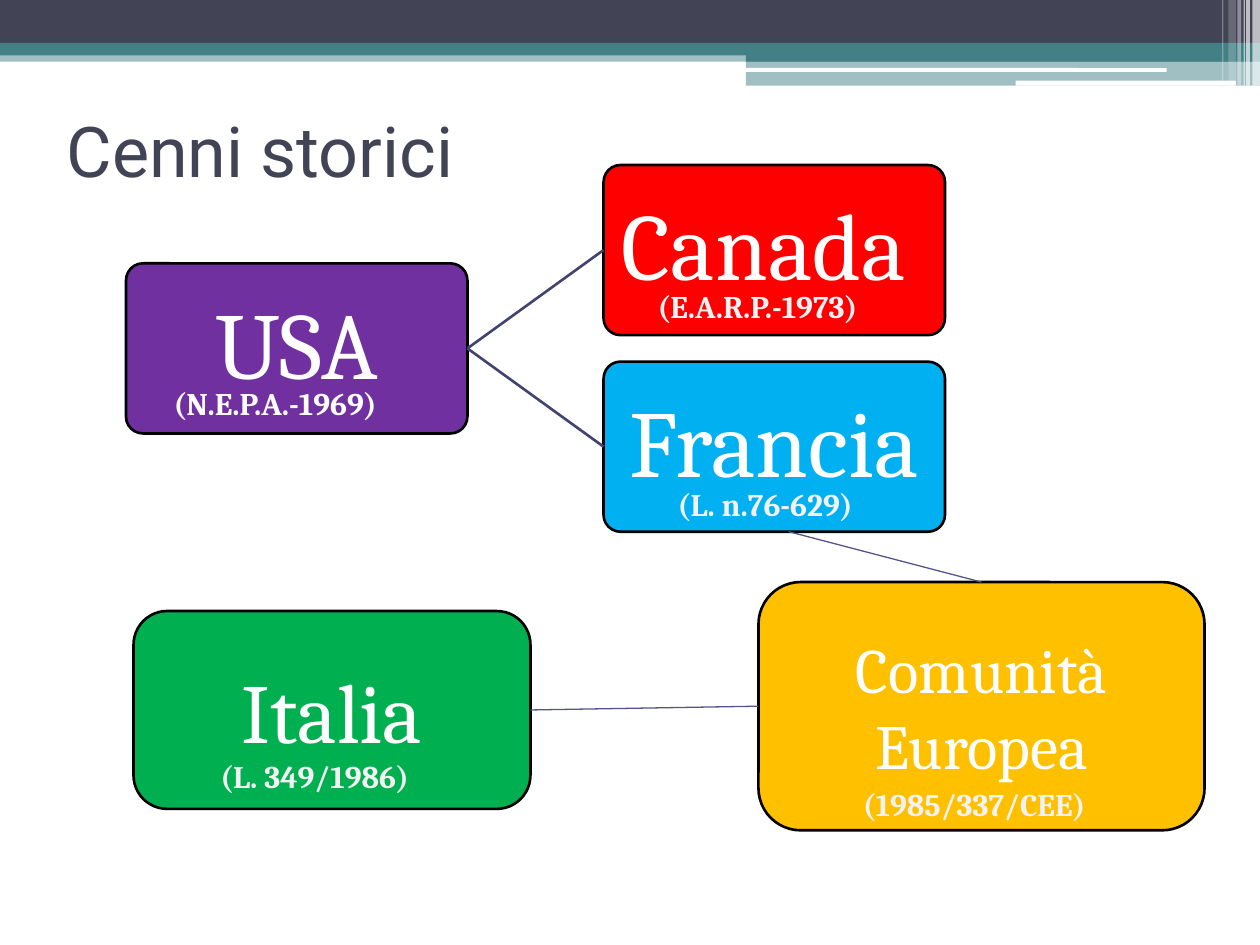
from dataclasses import dataclass

import pptx
import pptx.dml.color
import pptx.enum.shapes
import pptx.enum.text
import pptx.oxml
import pptx.oxml.ns
import pptx.util

Inches = pptx.util.Inches
Pt = pptx.util.Pt
Kind = pptx.enum.shapes.MSO_SHAPE
Align = pptx.enum.text.PP_ALIGN
Anchor = pptx.enum.text.MSO_ANCHOR

NAVY, TEAL, WHITE, PALE = "424456", "438086", "FFFFFF", "F2F2F2"


@dataclass
class Band:
    left: float
    top: float
    width: float
    height: float
    fill: str = WHITE
    alpha: int = 100
    kind: int = Kind.RECTANGLE


@dataclass
class Node:
    name: str
    left: float
    top: float
    width: float
    height: float
    fill: str
    size: int
    round: float = 0.17
    inset: float = 0.1
    space: float = 1.0


@dataclass
class Label:
    text: str
    left: float
    top: float
    width: float
    color: str = PALE


BANDS = [
    Band(0, 0.4, 10, 0.09, TEAL, 50),
    Band(0, 0, 10, 0.34, NAVY),
    Band(0, 0.34, 10, 0.1, TEAL),
    Band(5.92, 0.39, 4.08, 0.1, TEAL),
    Band(5.92, 0.48, 4.08, 0.2, TEAL, 50),
    Band(5.91, 0.54, 3.35, 0.03, kind=Kind.ROUNDED_RECTANGLE),
    Band(8.06, 0.64, 1.75, 0.04, kind=Kind.ROUNDED_RECTANGLE),
    Band(9.94, 0, 0.06, 0.68, alpha=65),
    Band(9.89, 0, 0.03, 0.68, alpha=65),
    Band(9.87, 0, 0.01, 0.68, alpha=60),
    Band(9.82, 0, 0.03, 0.68, alpha=40),
    Band(9.75, 0, 0.06, 0.64, alpha=20),
    Band(9.7, 0, 0.01, 0.64, alpha=30),
]

TREE = dict(width=2.71, height=1.35, size=54, round=0.1, inset=0.04, space=0.9)
NODES = [
    Node("USA", 1, 2.09, fill="7030A0", **TREE),
    Node("Canada ", 4.79, 1.31, fill="FF0000", **TREE),
    Node("Francia", 4.79, 2.87, fill="00B0F0", **TREE),
    Node("Comunità Europea", 6.02, 4.62, 3.54, 1.97, "FFC000", 36),
    Node("Italia", 1.06, 4.85, 3.15, 1.57, "00B050", 48),
]

LABELS = [
    Label("(N.E.P.A.-1969)", 1.28, 3, 2.2, WHITE),
    Label("(E.A.R.P.-1973)", 5.12, 2.23, 2.19),
    Label("(L. n.76-629)", 5.28, 3.8, 1.89),
    Label("(1985/337/CEE)", 6.75, 6.18, 2.27),
    Label("(L. 349/1986)", 1.65, 5.96, 1.97),
]


def rgb(code: str) -> pptx.dml.color.RGBColor:
    return pptx.dml.color.RGBColor.from_string(code)


def write(shape, text: str, *, size: int, color: str, font: str = "Cambria",
          bold: bool = False, align=Align.LEFT, anchor=Anchor.TOP,
          inset: float | None = None, space: float = 1.0) -> None:
    frame = shape.text_frame
    frame.word_wrap = True
    frame.vertical_anchor = anchor
    if inset is not None:
        frame.margin_left = frame.margin_right = Inches(inset)
        frame.margin_top = frame.margin_bottom = Inches(inset)
    para = frame.paragraphs[0]
    para.alignment = align
    para.line_spacing = space
    run = para.add_run()
    run.text = text
    run.font.name = font
    run.font.size = Pt(size)
    run.font.bold = bold
    run.font.color.rgb = rgb(color)


def add_box(shapes, kind, item: Band | Node):
    """Add a filled shape without shadow at the item's place."""
    box = shapes.add_shape(kind, Inches(item.left), Inches(item.top),
                           Inches(item.width), Inches(item.height))
    box.shadow.inherit = False
    box.fill.solid()
    box.fill.fore_color.rgb = rgb(item.fill)
    return box


def add_band(shapes, band: Band) -> None:
    box = add_box(shapes, band.kind, band)
    box.line.fill.background()
    if band.alpha < 100:
        color = box.fill._xPr.find(".//" + pptx.oxml.ns.qn("a:srgbClr"))
        alpha = pptx.oxml.parse_xml(
            f'<a:alpha {pptx.oxml.ns.nsdecls("a")} val="{band.alpha * 1000}"/>')
        color.append(alpha)


def add_node(shapes, node: Node):
    box = add_box(shapes, Kind.ROUNDED_RECTANGLE, node)
    box.adjustments[0] = node.round
    box.line.color.rgb = rgb("000000")
    box.line.width = Pt(1.5)
    write(box, node.name, size=node.size, color=WHITE, align=Align.CENTER,
          anchor=Anchor.MIDDLE, inset=node.inset, space=node.space)
    return box


def add_text(shapes, left: float, top: float, width: float, height: float,
             text: str, **form) -> None:
    box = shapes.add_textbox(Inches(left), Inches(top), Inches(width), Inches(height))
    write(box, text, **form)


def add_link(shapes, start, end, side: int, color: str, width: float,
             begin: tuple[float, float] | None = None) -> None:
    """Link start's right side, or the point begin, to a side of end."""
    x, y = begin or (0, 0)
    line = shapes.add_connector(pptx.enum.shapes.MSO_CONNECTOR.STRAIGHT,
                                Inches(x), Inches(y), Inches(x), Inches(y))
    if begin is None:
        line.begin_connect(start, 3)
    line.end_connect(end, side)
    line.line.color.rgb = rgb(color)
    line.line.width = Pt(width)
    line._element.spPr.append(pptx.oxml.parse_xml(
        f'<a:effectLst {pptx.oxml.ns.nsdecls("a")}/>'))


def main() -> None:
    deck = pptx.Presentation()
    deck.slide_width, deck.slide_height = Inches(10), Inches(7.5)
    shapes = deck.slides.add_slide(deck.slide_layouts[6]).shapes

    for band in BANDS:
        add_band(shapes, band)
    add_text(shapes, 0.43, 0.6, 9, 1.17, "Cenni storici", size=40,
             color=NAVY, font="Roboto", anchor=Anchor.MIDDLE)

    usa, canada, france, europe, italy = [add_node(shapes, node) for node in NODES]
    for child in (canada, france):
        add_link(shapes, usa, child, 1, "42436F", 1.5)
    add_link(shapes, france, europe, 0, "53548A", 0.75, begin=(6.26, 4.22))
    add_link(shapes, italy, europe, 1, "53548A", 0.75)

    for label in LABELS:
        add_text(shapes, label.left, label.top, label.width, 0.4, label.text,
                 size=18, color=label.color, bold=True)
    deck.save("out.pptx")


if __name__ == "__main__":
    main()
